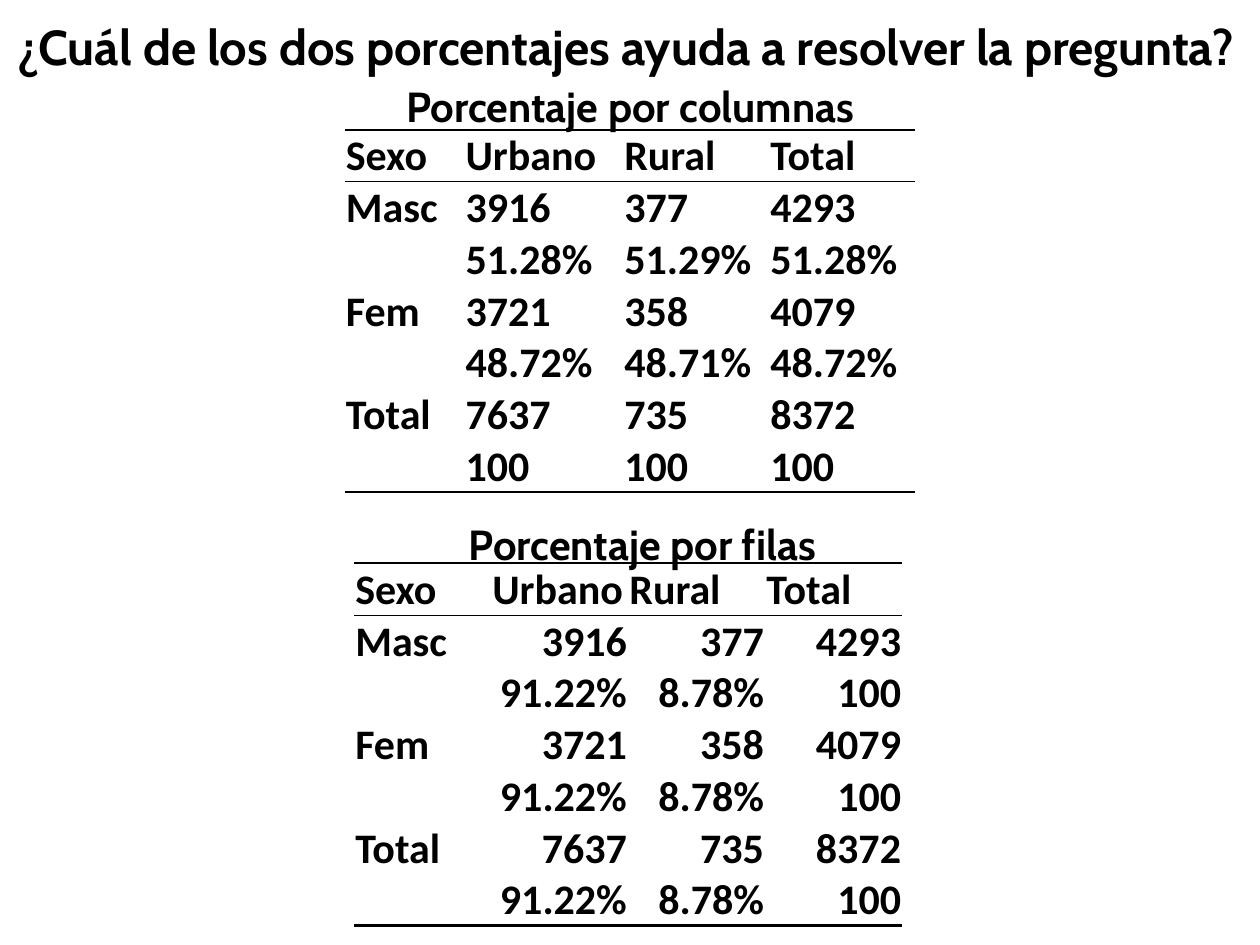
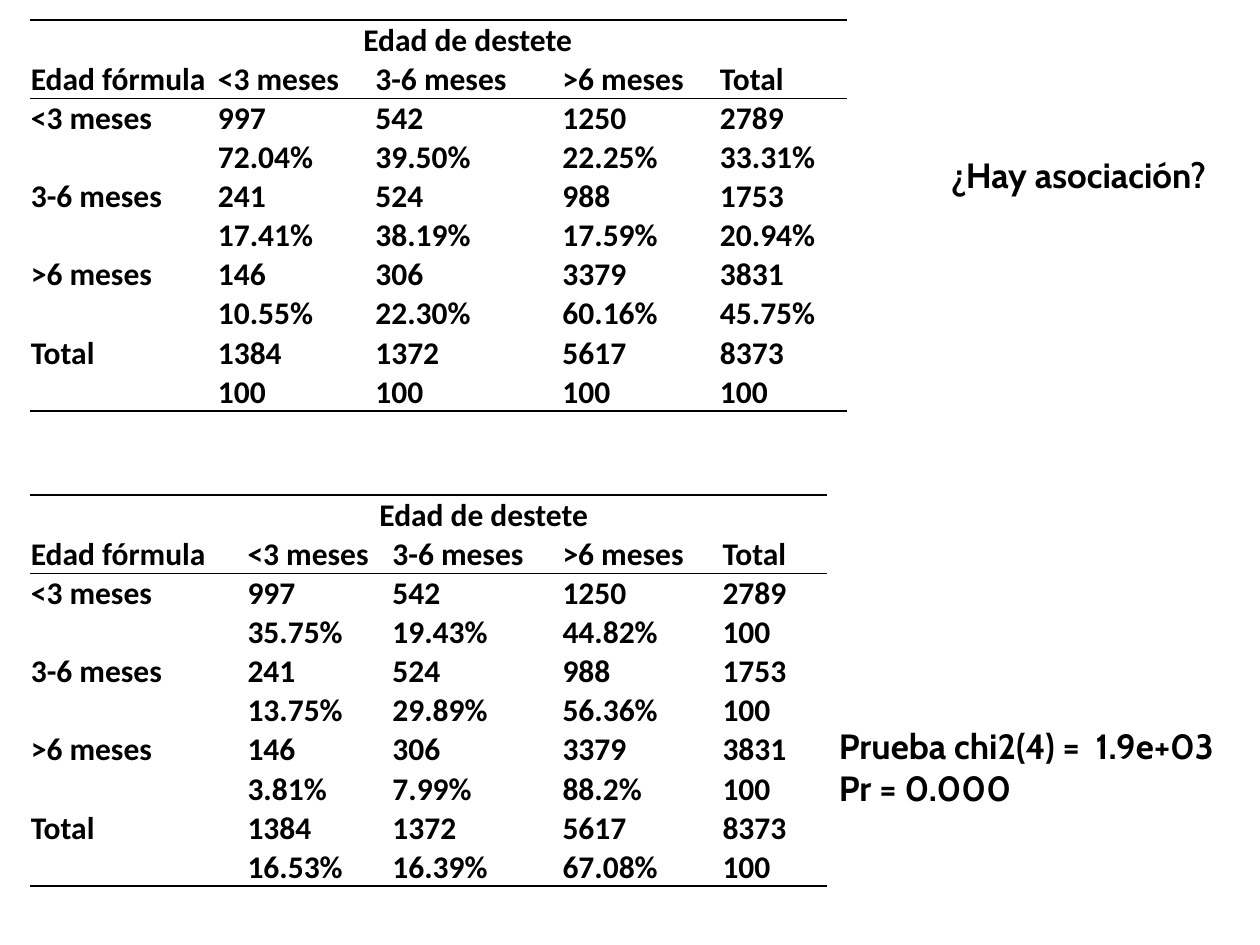
from dataclasses import dataclass
from itertools import chain
from typing import Optional

from lxml import etree
from pptx import Presentation
from pptx import util as u
from pptx.dml.color import RGBColor
from pptx.enum import text
from pptx.oxml.ns import qn

COLOURS = {"ink": "000000"}
HEADING_FONT, TABLE_FONT = "Cabin", "Calibri"
WIDTH, HEIGHT = u.Inches(10), u.Inches(7.5)
THICK, THIN = 1.5, 0.5
PLAIN_TABLE = "{2D5ABB26-0587-4C30-8999-92F81FD0307C}"
ALIGN = text.PP_ALIGN


@dataclass
class Area:
    left: float
    top: float
    width: float
    height: float

    def lengths(self) -> tuple:
        return across(self.left), down(self.top), across(self.width), down(self.height)


@dataclass
class Caption:
    lines: list[str]
    area: Area
    size: int
    align: ALIGN = ALIGN.LEFT
    wrap: bool = False


@dataclass
class CrossTable:
    left: float
    top: float
    columns: list[float]
    row_height: float
    header: list[str]
    counts: list[list[str]]
    shares: list[list[str]]
    size: int
    figures: ALIGN = ALIGN.LEFT
    spanner: Optional[str] = None

    def rows(self) -> list[list[str]]:
        blank = [""] * (len(self.header) - 2)
        top = [["", self.spanner, *blank]] if self.spanner else []
        pairs = zip(self.counts, ([""] + share for share in self.shares))
        return [*top, self.header, *chain.from_iterable(pairs)]


def across(percent: float) -> int:
    return round(WIDTH * percent / 100)


def down(percent: float) -> int:
    return round(HEIGHT * percent / 100)


def write(paragraph, words: str, size: int, face: str) -> None:
    run = paragraph.add_run()
    run.text = words
    run.font.name = face
    run.font.size = u.Pt(size)
    run.font.bold = True
    run.font.color.rgb = RGBColor.from_string(COLOURS["ink"])


def fill_caption(shape, caption: Caption) -> None:
    shape.left, shape.top, shape.width, shape.height = caption.area.lengths()
    frame = shape.text_frame
    frame.word_wrap = caption.wrap
    frame.auto_size = text.MSO_AUTO_SIZE.SHAPE_TO_FIT_TEXT
    frame.vertical_anchor = text.MSO_ANCHOR.TOP
    paragraph = frame.paragraphs[0]
    paragraph.alignment = caption.align
    for number, line in enumerate(caption.lines):
        if number:
            paragraph.add_line_break()
        write(paragraph, line, caption.size, HEADING_FONT)


def add_caption(slide, caption: Caption) -> None:
    fill_caption(slide.shapes.add_textbox(*caption.area.lengths()), caption)


def rule(cell, position: int, edge: str, points: float) -> None:
    line = etree.Element(qn(f"a:{edge}"), w=str(u.Pt(points)))
    paint = etree.SubElement(line, qn("a:solidFill"))
    etree.SubElement(paint, qn("a:srgbClr"), val=COLOURS["ink"])
    cell._tc.get_or_add_tcPr().insert(position, line)


def add_cross_table(slide, cross: CrossTable) -> None:
    rows = cross.rows()
    area = Area(cross.left, cross.top, sum(cross.columns), cross.row_height * len(rows))
    frame = slide.shapes.add_table(len(rows), len(cross.columns), *area.lengths())
    table = frame.table
    table.first_row = table.horz_banding = False
    next(frame._element.iter(qn("a:tableStyleId"))).text = PLAIN_TABLE
    for column, width in zip(table.columns, cross.columns):
        column.width = across(width)
    if cross.spanner:
        table.cell(0, 1).merge(table.cell(0, 3))

    body_start = 2 if cross.spanner else 1
    tops = {0: THICK}
    bottoms = {body_start - 1: THIN, len(rows) - 1: THICK}
    for r, row in enumerate(rows):
        table.rows[r].height = down(cross.row_height)
        for c, words in enumerate(row):
            cell = table.cell(r, c)
            cell.fill.background()
            cell.vertical_anchor = text.MSO_ANCHOR.BOTTOM
            cell.margin_left = cell.margin_right = cell.margin_top = u.Inches(0.01)
            cell.margin_bottom = 0
            paragraph = cell.text_frame.paragraphs[0]
            if words:
                write(paragraph, words, cross.size, TABLE_FONT)
            if words == cross.spanner:
                paragraph.alignment = ALIGN.CENTER
            elif r >= body_start and c:
                paragraph.alignment = cross.figures
            rules = [("lnT", tops.get(r)), ("lnB", bottoms.get(r))]
            drawn = [(edge, points) for edge, points in rules if points]
            for position, (edge, points) in enumerate(drawn):
                rule(cell, position, edge, points)


SEX_HEADER = ["Sexo", "Urbano", "Rural", "Total"]
SEX_COUNTS = [
    ["Masc", "3916", "377", "4293"],
    ["Fem", "3721", "358", "4079"],
    ["Total", "7637", "735", "8372"],
]
SEX_TABLES = [
    CrossTable(27.35, 13.75, [9.5, 12.6, 11.6, 11.6], 5.48, SEX_HEADER, SEX_COUNTS,
               [["51.28%", "51.29%", "51.28%"],
                ["48.72%", "48.71%", "48.72%"],
                ["100"] * 3], 24),
    CrossTable(28.1, 59.6, [10.88] * 4, 5.48, SEX_HEADER, SEX_COUNTS,
               [["91.22%", "8.78%", "100"]] * 3, 24, ALIGN.RIGHT),
]
QUESTION = Caption(["¿Cuál de los dos porcentajes ayuda a resolver la pregunta?"],
                   Area(0.4, 1.07, 99.6, 7.6), 28)
SEX_CAPTIONS = [
    Caption(["Porcentaje por columnas"], Area(31.25, 7.87, 37.8, 6.67), 24),
    Caption(["Porcentaje por filas"], Area(36.2, 54.17, 29.9, 6.67), 24),
]

AGES = ["<3 meses", "3-6 meses", ">6 meses", "Total"]
AGE_HEADER = ["Edad fórmula", *AGES]
AGE_COUNTS = [[age, *counts] for age, counts in zip(AGES, [
    ["997", "542", "1250", "2789"],
    ["241", "524", "988", "1753"],
    ["146", "306", "3379", "3831"],
    ["1384", "1372", "5617", "8373"],
])]
AGE_TABLES = [
    CrossTable(2.35, 2.13, [14.85, 12.5, 14.85, 12.5, 10.2], 4.13, AGE_HEADER, AGE_COUNTS,
               [["72.04%", "39.50%", "22.25%", "33.31%"],
                ["17.41%", "38.19%", "17.59%", "20.94%"],
                ["10.55%", "22.30%", "60.16%", "45.75%"],
                ["100"] * 4], 18, spanner="Edad de destete"),
    CrossTable(2.35, 52.4, [17.2, 11.5, 13.5, 12.7, 8.4], 4.13, AGE_HEADER, AGE_COUNTS,
               [["35.75%", "19.43%", "44.82%", "100"],
                ["13.75%", "29.89%", "56.36%", "100"],
                ["3.81%", "7.99%", "88.2%", "100"],
                ["16.53%", "16.39%", "67.08%", "100"]], 18, spanner="Edad de destete"),
]
AGE_CAPTIONS = [
    Caption(["¿Hay asociación?"], Area(72.7, 15.6, 25.8, 5.87), 20, ALIGN.CENTER, True),
    Caption(["Prueba chi2(4) =  1.9e+03", "Pr = 0.000"],
            Area(65.6, 76, 34.4, 10.27), 20, wrap=True),
]


def add_content(slide, tables: list[CrossTable], captions: list[Caption]) -> None:
    for cross in tables:
        add_cross_table(slide, cross)
    for caption in captions:
        add_caption(slide, caption)


def main() -> None:
    deck = Presentation()
    deck.slide_width, deck.slide_height = WIDTH, HEIGHT
    title_only, blank = deck.slide_layouts[5], deck.slide_layouts[6]

    by_sex = deck.slides.add_slide(title_only)
    fill_caption(by_sex.shapes.title, QUESTION)
    add_content(by_sex, SEX_TABLES, SEX_CAPTIONS)

    by_age = deck.slides.add_slide(blank)
    add_content(by_age, AGE_TABLES, AGE_CAPTIONS)

    deck.save("out.pptx")


if __name__ == "__main__":
    main()
